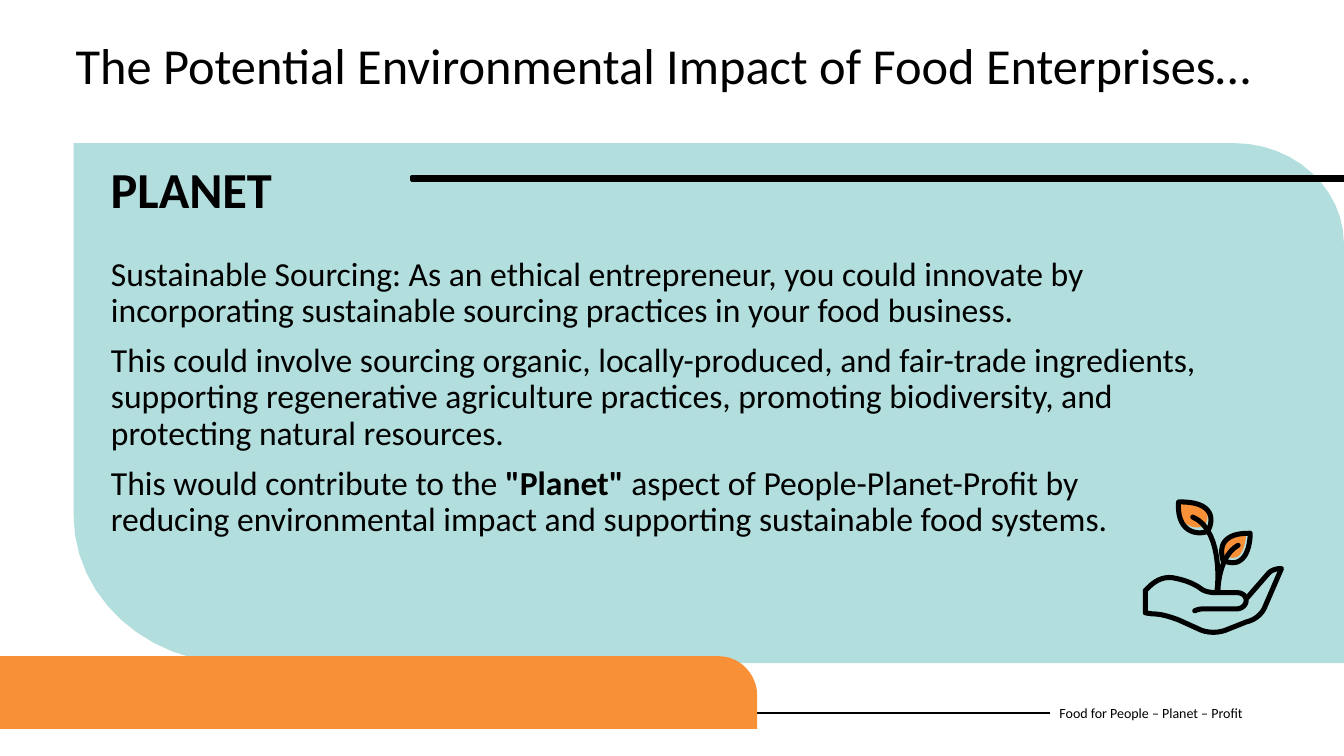
"""Builds the slide on the environmental impact of food enterprises."""
import pptx
import pptx.util
import pptx.dml.color
import pptx.enum.shapes
import pptx.enum.text
import pptx.oxml.ns
import lxml.etree

BLACK = pptx.dml.color.RGBColor(0x00, 0x00, 0x00)
TEAL = pptx.dml.color.RGBColor(0xB2, 0xDE, 0xDD)
ORANGE = pptx.dml.color.RGBColor(0xF7, 0x90, 0x37)
FONT = "Calibri"
WIDTH, HEIGHT = 13.33, 7.5
CURVE_STEPS = 12
ICON_STROKE = 3.6

TITLE = [[("The Potential Environmental Impact of Food Enterprises…", False)]]
HEADING = [[("PLANET", True)]]
FOOTER = [[("Food for People – Planet – Profit", False)]]
BODY = [
    [("Sustainable Sourcing: As an ethical entrepreneur, you could innovate by "
      "incorporating sustainable sourcing practices in your food business.", False)],
    [("This could involve sourcing organic, locally-produced, and fair-trade ingredients, "
      "supporting regenerative agriculture practices, promoting biodiversity, and "
      "protecting natural resources.", False)],
    [("This would contribute to the ", False), ("\"Planet\" ", True),
     ("aspect of People-Planet-Profit by reducing environmental impact and supporting "
      "sustainable food systems.", False)],
]

# Each outline is a list of steps: a pair is a straight line, six numbers are a curve.
PANEL = [(0.73, 1.42), (12.24, 1.42), (12.84, 1.42, WIDTH, 1.87, WIDTH, 2.42),
         (WIDTH, 6.58), (2.34, 6.58), (1.45, 6.58, 0.73, 5.92, 0.73, 5.11)]
BAND = [(0, 7.23), (0, 6.51), (7.13, 6.51), (7.34, 6.51, 7.51, 6.69, 7.51, 6.9),
        (7.51, 7.23)]
LEAF_FILLS = [
    [(12.14, 5.51), (12.2, 5.54, 12.25, 5.54, 12.28, 5.52),
     (12.34, 5.47, 12.36, 5.35, 12.36, 5.28), (12.26, 5.28, 12.19, 5.3, 12.15, 5.35),
     (12.11, 5.41, 12.13, 5.48, 12.14, 5.51)],
    [(11.7, 4.98), (11.69, 5.09, 11.72, 5.16, 11.77, 5.2),
     (11.84, 5.25, 11.92, 5.23, 11.95, 5.22), (11.98, 5.15, 11.99, 5.1, 11.96, 5.06),
     (11.91, 4.99, 11.77, 4.98, 11.7, 4.98)],
]
LEAF_EDGES = [
    [(12.13, 5.56), (12.2, 5.59, 12.26, 5.59, 12.3, 5.56),
     (12.38, 5.51, 12.4, 5.37, 12.4, 5.29), (12.28, 5.29, 12.2, 5.31, 12.15, 5.37),
     (12.1, 5.43, 12.12, 5.52, 12.13, 5.56)],
    [(11.69, 4.98), (11.68, 5.1, 11.71, 5.2, 11.78, 5.25),
     (11.85, 5.3, 11.94, 5.29, 11.98, 5.27), (12.02, 5.19, 12.02, 5.13, 11.99, 5.08),
     (11.93, 4.98, 11.76, 4.98, 11.69, 4.98)],
]
STEMS = [
    [(12.07, 5.87), (12.1, 5.63, 12.07, 5.23, 11.83, 5.13)],
    [(12.08, 5.87), (12.08, 5.75, 12.12, 5.5, 12.28, 5.41)],
]
HAND = [
    [(11.36, 5.86), (11.39, 5.83, 11.5, 5.69, 11.67, 5.74),
     (11.77, 5.76, 11.86, 5.8, 11.91, 5.84), (11.95, 5.87, 12.01, 5.88, 12.06, 5.88),
     (12.27, 5.88), (12.32, 5.88, 12.36, 5.91, 12.36, 5.96),
     (12.36, 6, 12.32, 6.04, 12.27, 6.04), (11.97, 6.04),
     (11.93, 6.04, 11.89, 6.04, 11.85, 6.06)],
    [(12.37, 5.93), (12.57, 5.7), (12.6, 5.66, 12.65, 5.64, 12.71, 5.64), (12.55, 6.01),
     (12.52, 6.09, 12.45, 6.15, 12.36, 6.17), (12.16, 6.25),
     (12.08, 6.28, 11.99, 6.28, 11.91, 6.25), (11.69, 6.15),
     (11.61, 6.12, 11.52, 6.09, 11.43, 6.09), (11.36, 6.08), (11.36, 5.86)],
]


def to_points(outline):
    points = [outline[0]]
    for step in outline[1:]:
        if len(step) == 2:
            points.append(step)
            continue
        corners = [points[-1], step[:2], step[2:4], step[4:]]
        for count in range(1, CURVE_STEPS + 1):
            t = count / CURVE_STEPS
            weights = ((1 - t) ** 3, 3 * t * (1 - t) ** 2, 3 * t * t * (1 - t), t ** 3)
            points.append(tuple(sum(w * c[axis] for w, c in zip(weights, corners))
                                for axis in (0, 1)))
    return [(pptx.util.Inches(x), pptx.util.Inches(y)) for x, y in points]


def draw_outline(page, outline, fill=None):
    points = to_points(outline)
    builder = page.shapes.build_freeform(*points[0])
    builder.add_line_segments(points[1:], close=fill is not None)
    shape = builder.convert_to_shape()
    shape.shadow.inherit = False
    if fill is not None:
        shape.fill.solid()
        shape.fill.fore_color.rgb = fill
        shape.line.fill.background()
    else:
        shape.fill.background()
        shape.line.color.rgb = BLACK
        shape.line.width = pptx.util.Pt(ICON_STROKE)
        stroke = shape.line._get_or_add_ln()
        stroke.set("cap", "rnd")
        lxml.etree.SubElement(stroke, pptx.oxml.ns.qn("a:round"))


def write(box, place, paragraphs, size, anchor, spaced=False):
    box.left, box.top, box.width, box.height = map(pptx.util.Inches, place)
    frame = box.text_frame
    frame.word_wrap = True
    frame.auto_size = pptx.enum.text.MSO_AUTO_SIZE.NONE
    frame.vertical_anchor = anchor
    for number, runs in enumerate(paragraphs):
        para = frame.add_paragraph() if number else frame.paragraphs[0]
        para.alignment = pptx.enum.text.PP_ALIGN.LEFT
        if spaced:
            para.line_spacing = 0.9
            para.space_before = pptx.util.Pt(10)
            settings = para._p.get_or_add_pPr()
            settings.set("marL", "0")
            settings.set("indent", "0")
            lxml.etree.SubElement(settings, pptx.oxml.ns.qn("a:buNone"))
        for text, bold in runs:
            span = para.add_run()
            span.text = text
            span.font.name = FONT
            span.font.size = pptx.util.Pt(size)
            span.font.bold = bold
            span.font.color.rgb = BLACK


def main():
    deck = pptx.Presentation()
    deck.slide_width = pptx.util.Inches(WIDTH)
    deck.slide_height = pptx.util.Inches(HEIGHT)
    page = deck.slides.add_slide(deck.slide_layouts[1])
    title, body = page.shapes.title, page.placeholders[1]
    top = pptx.enum.text.MSO_ANCHOR.TOP
    middle = pptx.enum.text.MSO_ANCHOR.MIDDLE

    footer = page.shapes.add_textbox(0, 0, 0, 0)
    write(footer, (10.41, 6.87, 2.73, 0.4), FOOTER, 10, middle)
    rule = page.shapes.add_connector(
        pptx.enum.shapes.MSO_CONNECTOR.STRAIGHT,
        *map(pptx.util.Inches, (0, 7.07, 10.41, 7.07)))
    rule.line.color.rgb = BLACK
    rule.line.width = pptx.util.Pt(1.5)
    lxml.etree.SubElement(rule._element.spPr, pptx.oxml.ns.qn("a:effectLst"))

    draw_outline(page, PANEL, TEAL)
    draw_outline(page, BAND, ORANGE)
    bar = page.shapes.add_shape(
        pptx.enum.shapes.MSO_SHAPE.RECTANGLE,
        *map(pptx.util.Inches, (4.08, 1.75, WIDTH - 4.08, 0.04)))
    bar.shadow.inherit = False
    bar.fill.solid()
    bar.fill.fore_color.rgb = BLACK
    bar.line.color.rgb = BLACK
    bar.line.width = pptx.util.Pt(1.93)

    for holder in (body, title):
        page.shapes._spTree.append(holder._element)
    write(body, (1, 2.5, 11.01, 3.76), BODY, 24, top, spaced=True)
    write(title, (0.65, 0.36, 11.93, 0.88), TITLE, 36, top, spaced=True)
    heading = page.shapes.add_textbox(0, 0, 0, 0)
    write(heading, (1, 1.52, 2.67, 0.71), HEADING, 36, top)

    for leaf in LEAF_FILLS:
        draw_outline(page, leaf, ORANGE)
    for stroke in HAND + LEAF_EDGES + STEMS:
        draw_outline(page, stroke)
    deck.save("out.pptx")


if __name__ == "__main__":
    main()
